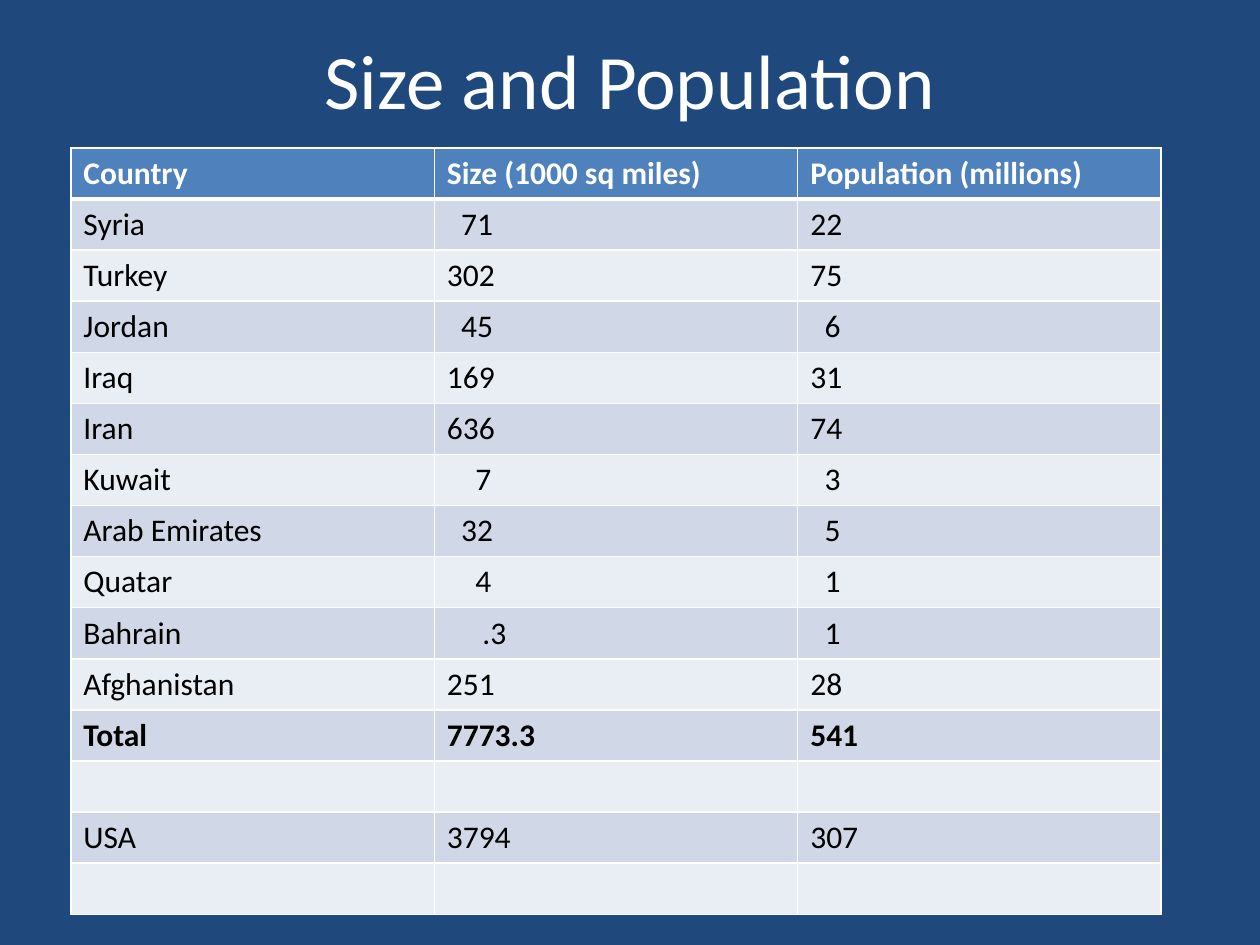
from dataclasses import dataclass

from lxml import etree
from pptx import Presentation
from pptx.dml.color import RGBColor
from pptx.enum import text
from pptx.oxml.ns import qn
from pptx.util import Pt


@dataclass(frozen=True)
class Theme:
    font: str = "Calibri"
    title_size: float = 44
    table_size: float = 18
    background: str = "1F497D"
    light: str = "FFFFFF"
    dark: str = "000000"
    header: str = "4F81BD"
    bands: tuple = ("D0D8E8", "E9EDF4")
    rule: float = 1
    header_rule: float = 3
    cell_margin: float = 7.2
    indent_step: float = 4.07


THEME = Theme()

HEADINGS = ("Country", "Size (1000 sq miles)", "Population (millions)")
# A pair is a figure and the steps it is indented by.
COUNTRIES = (
    ("Syria", ("71", 2), "22"),
    ("Turkey", "302", "75"),
    ("Jordan", ("45", 2), ("6", 2)),
    ("Iraq", "169", "31"),
    ("Iran", "636", "74"),
    ("Kuwait", ("7", 4), ("3", 2)),
    ("Arab Emirates", ("32", 2), ("5", 2)),
    ("Quatar", ("4", 4), ("1", 2)),
    ("Bahrain", (".3", 5), ("1", 2)),
    ("Afghanistan", "251", "28"),
    ("Total", "7773.3", "541"),
    ("", "", ""),
    ("USA", "3794", "307"),
    ("", "", ""),
)


def style_font(font, size, color, bold=False):
    font.name = THEME.font
    font.size = Pt(size)
    font.bold = bold
    font.color.rgb = RGBColor.from_string(color)


def add_borders(cell, top, bottom):
    properties = cell._tc.get_or_add_tcPr()
    widths = {"lnL": THEME.rule, "lnR": THEME.rule, "lnT": top, "lnB": bottom}
    for side, width in widths.items():
        line = etree.SubElement(properties, qn(f"a:{side}"), w=str(Pt(width)))
        fill = etree.SubElement(line, qn("a:solidFill"))
        etree.SubElement(fill, qn("a:srgbClr"), val=THEME.light)


def place_title(slide, left, top, width, height):
    title = slide.shapes.title
    title.left, title.top = Pt(left), Pt(top)
    title.width, title.height = Pt(width), Pt(height)
    frame = title.text_frame
    frame.text = "Size and Population"
    frame.vertical_anchor = text.MSO_ANCHOR.MIDDLE
    heading = frame.paragraphs[0]
    heading.alignment = text.PP_ALIGN.CENTER
    style_font(heading.font, THEME.title_size, THEME.light)


def fill_cell(cell, entry, row):
    figure, steps = entry if isinstance(entry, tuple) else (entry, 0)
    is_header = row == 0
    add_borders(
        cell,
        top=THEME.header_rule if row == 1 else THEME.rule,
        bottom=THEME.header_rule if is_header else THEME.rule,
    )
    cell.fill.solid()
    band = THEME.header if is_header else THEME.bands[(row - 1) % 2]
    cell.fill.fore_color.rgb = RGBColor.from_string(band)
    cell.margin_left = Pt(THEME.cell_margin + steps * THEME.indent_step)
    cell.text = figure
    is_total = COUNTRIES[row - 1][0] == "Total"
    style_font(
        cell.text_frame.paragraphs[0].font,
        THEME.table_size,
        THEME.light if is_header else THEME.dark,
        bold=is_header or is_total,
    )


def place_country_table(slide, left, top, width, height):
    rows = (HEADINGS, *COUNTRIES)
    table = slide.shapes.add_table(
        len(rows), len(HEADINGS), Pt(left), Pt(top), Pt(width), Pt(height)
    ).table
    for row, entries in enumerate(rows):
        for column, entry in enumerate(entries):
            fill_cell(table.cell(row, column), entry, row)


def main():
    deck = Presentation()
    deck.slide_width, deck.slide_height = Pt(720), Pt(540)
    slide = deck.slides.add_slide(deck.slide_layouts.get_by_name("Title Only"))
    slide.background.fill.solid()
    slide.background.fill.fore_color.rgb = RGBColor.from_string(THEME.background)
    place_title(slide, 36, 0, 648, 90)
    place_country_table(slide, 40.5, 84.5, 623, 432)
    deck.save("out.pptx")


if __name__ == "__main__":
    main()
